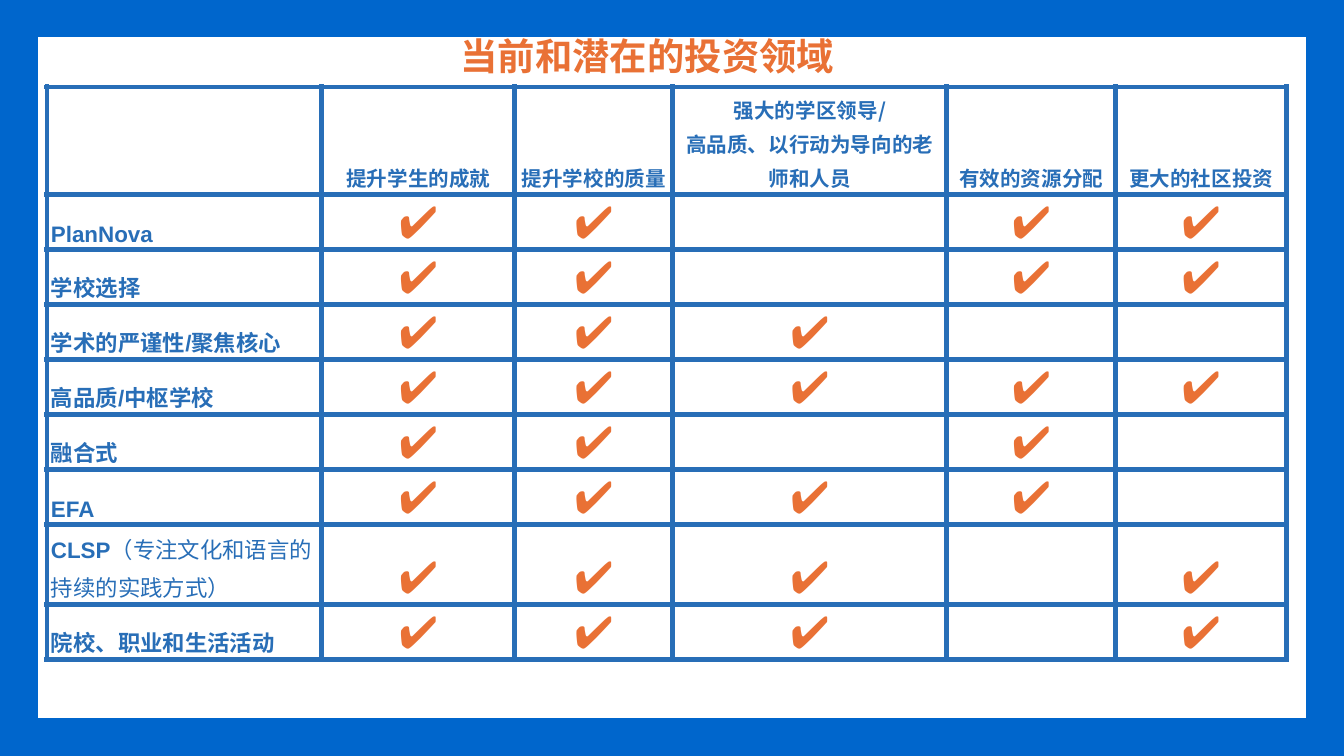
from dataclasses import dataclass

from lxml.etree import SubElement
from pptx import Presentation
from pptx.dml.color import RGBColor as Rgb
from pptx.enum.shapes import MSO_SHAPE as Shape
from pptx.enum.text import MSO_ANCHOR as Anchor, MSO_AUTO_SIZE as Fit, PP_ALIGN as Align
from pptx.oxml.ns import qn
from pptx.util import Pt

PX = 6804  # EMU per px, 1344 px across the slide


@dataclass(frozen=True)
class Theme:
    frame: str = "0066CC"
    ink: str = "286EB7"
    accent: str = "E97135"
    latin: str = "Arial"
    cjk: str = "Noto Sans CJK SC"
    title_size: int = 20
    head_size: int = 11
    label_size: int = 12
    mark_size: int = 24
    border: int = 3


def assign(target, values):
    for name, value in values.items():
        setattr(target, name, value)


class SlideBuilder:
    def __init__(self, page, theme):
        self.page, self.theme = page, theme

    def place(self, shape, left, top, width, height):
        assign(shape, dict(left=left * PX, top=top * PX, width=width * PX, height=height * PX))

    def span(self, para, text, size, color, bold, latin, cjk=None):
        span = para.add_run()
        span.text = text
        assign(span.font, dict(size=Pt(size), bold=bold, name=latin))
        span.font.color.rgb = Rgb.from_string(color)
        if cjk:
            SubElement(span.font._element, qn("a:ea"), typeface=cjk)

    def frame(self, *area):
        shape = self.page.shapes.add_shape(Shape.FRAME, 0, 0, PX, PX)
        self.place(shape, *area)
        shape.adjustments[0] = 0.05
        shape.shadow.inherit = False
        shape.fill.solid()
        shape.fill.fore_color.rgb = Rgb.from_string(self.theme.frame)
        shape.line.fill.background()
        self.page.shapes._spTree.insert(2, shape._element)  # behind the title

    def title(self, text, *area):
        theme, box = self.theme, self.page.shapes.title
        self.place(box, *area)
        assign(box.text_frame, dict(
            auto_size=Fit.NONE, word_wrap=True, vertical_anchor=Anchor.TOP,
            margin_left=13 * PX, margin_right=13 * PX, margin_top=13 * PX, margin_bottom=13 * PX))
        para = box.text_frame.paragraphs[0]
        assign(para, dict(alignment=Align.CENTER, line_spacing=1.0))
        self.span(para, text, theme.title_size, theme.accent, True, theme.cjk, theme.cjk)

    def table(self, left, top, widths, heights):
        holder = self.page.shapes.add_table(
            len(heights), len(widths), left * PX, top * PX, sum(widths) * PX, sum(heights) * PX)
        table = holder.table
        assign(table, dict(first_row=False, horz_banding=False))
        for column, width in zip(table.columns, widths):
            column.width = width * PX
        for row, height in zip(table.rows, heights):
            row.height = height * PX
        for cell in table.iter_cells():
            self.style_cell(cell)
        return table

    def style_cell(self, cell):
        assign(cell, dict(
            vertical_anchor=Anchor.BOTTOM, margin_left=4 * PX, margin_right=4 * PX,
            margin_top=3 * PX, margin_bottom=2 * PX))
        props = cell._tc.get_or_add_tcPr()
        for side in ("lnL", "lnR", "lnT", "lnB"):
            line = SubElement(props, qn(f"a:{side}"), w=str(Pt(self.theme.border)))
            fill = SubElement(line, qn("a:solidFill"))
            SubElement(fill, qn("a:srgbClr"), val=self.theme.ink)
        cell.fill.background()

    def heading(self, cell, lines):
        theme, frame = self.theme, cell.text_frame
        for index, text in enumerate(lines):
            para = frame.add_paragraph() if index else frame.paragraphs[0]
            assign(para, dict(alignment=Align.CENTER, line_spacing=1.15))
            self.span(para, text, theme.head_size, theme.ink, True, theme.cjk, theme.cjk)

    def label(self, cell, name, note):
        theme, para = self.theme, cell.text_frame.paragraphs[0]
        assign(para, dict(alignment=Align.LEFT, line_spacing=1.15))
        for text, bold in ((name, True), (note, False)):
            if text:
                self.span(para, text, theme.label_size, theme.ink, bold, theme.latin, theme.cjk)

    def mark(self, cell):
        theme, para = self.theme, cell.text_frame.paragraphs[0]
        para.alignment = Align.CENTER
        self.span(para, "✔", theme.mark_size, theme.accent, False, theme.latin)


HEADINGS = [
    ["提升学生的成就"],
    ["提升学校的质量"],
    ["强大的学区领导/", "高品质、以行动为导向的老师和人员"],
    ["有效的资源分配"],
    ["更大的社区投资"],
]

# Name, note, numbers of the columns that are ticked
PROGRAMS = [
    ("PlanNova", "", (1, 2, 4, 5)),
    ("学校选择", "", (1, 2, 4, 5)),
    ("学术的严谨性/聚焦核心", "", (1, 2, 3)),
    ("高品质/中枢学校", "", (1, 2, 3, 4, 5)),
    ("融合式", "", (1, 2, 4)),
    ("EFA", "", (1, 2, 3, 4)),
    ("CLSP", "（专注文化和语言的持续的实践方式）", (1, 2, 3, 5)),
    ("院校、职业和生活活动", "", (1, 2, 3, 5)),
]


def main():
    deck = Presentation()
    assign(deck, dict(slide_width=1344 * PX, slide_height=756 * PX))
    page = deck.slides.add_slide(deck.slide_layouts[0])
    subtitle = page.placeholders[1]._element
    subtitle.getparent().remove(subtitle)
    builder = SlideBuilder(page, Theme())

    # Frame and title
    builder.frame(0, -1, 1344, 757)
    builder.title("当前和潜在的投资领域", 108, 20, 1079, 83)

    # Table of programs against investment areas
    heights = [107] + [80 if note else 55 for _, note, _ in PROGRAMS]
    table = builder.table(47, 87, [275, 193, 158, 274, 169, 171], heights)
    for column, lines in enumerate(HEADINGS, 1):
        builder.heading(table.cell(0, column), lines)
    for row, (name, note, ticked) in enumerate(PROGRAMS, 1):
        builder.label(table.cell(row, 0), name, note)
        for column in ticked:
            builder.mark(table.cell(row, column))

    deck.save("out.pptx")


if __name__ == "__main__":
    main()
